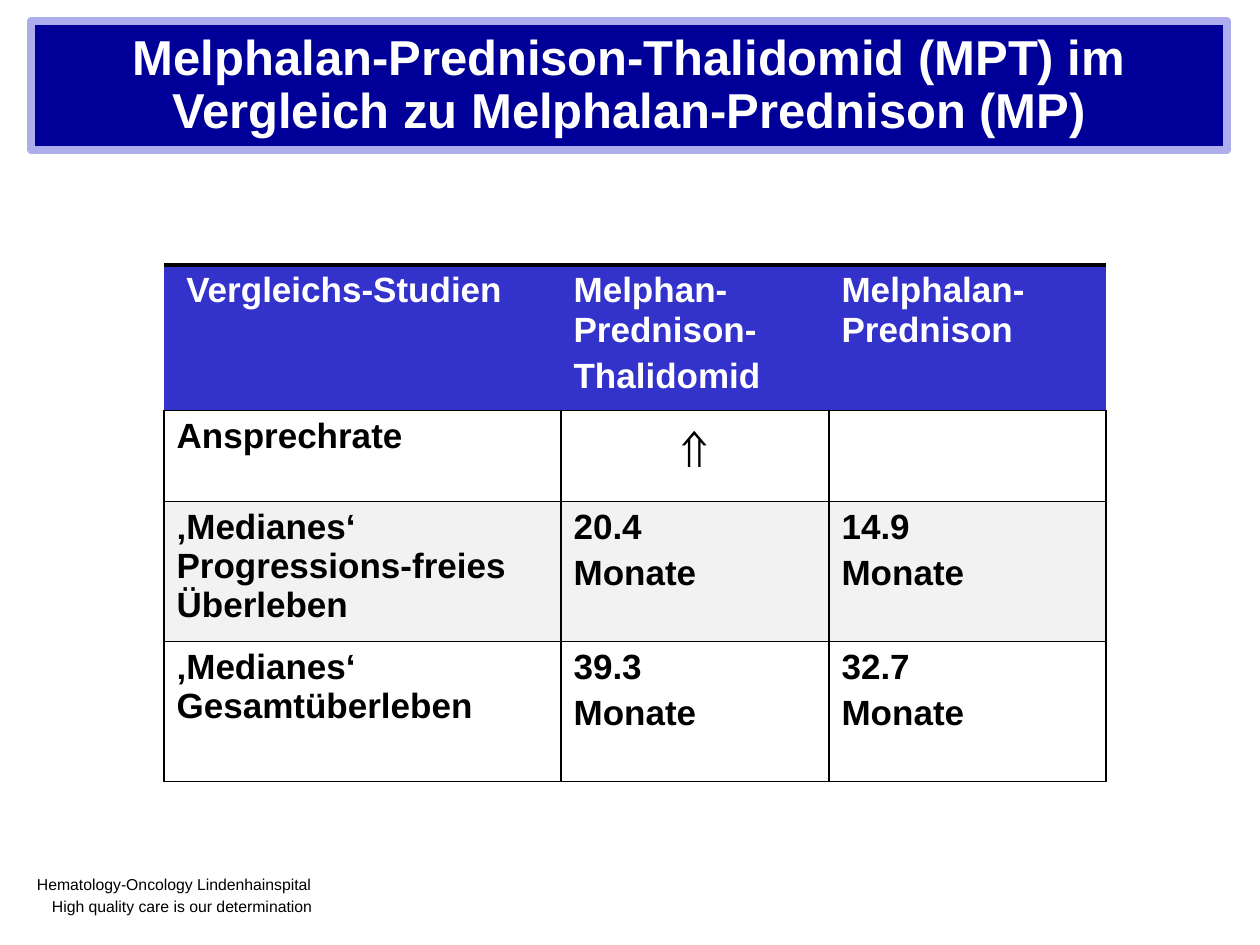
from lxml import etree
from pptx import Presentation
from pptx.dml.color import RGBColor
from pptx.enum.shapes import MSO_SHAPE
from pptx.enum.text import MSO_ANCHOR, MSO_AUTO_SIZE, PP_ALIGN
from pptx.oxml.ns import qn
from pptx.util import Pt

RECTANGLE = MSO_SHAPE.RECTANGLE
MIDDLE = MSO_ANCHOR.MIDDLE
NO_AUTOFIT = MSO_AUTO_SIZE.NONE
LEFT, CENTER = PP_ALIGN.LEFT, PP_ALIGN.CENTER

WHITE = RGBColor(0xFF, 0xFF, 0xFF)
BLACK = RGBColor(0, 0, 0)
NAVY = RGBColor(0, 0, 0x99)
LAVENDER = RGBColor(0xAD, 0xAD, 0xEB)
HEADER_BLUE = RGBColor(0x33, 0x33, 0xCC)
PALE_GRAY = RGBColor(0xF2, 0xF2, 0xF2)

FONT = "Arial"
EMU_PER_INCH = 914400
PX_PER_INCH = 126

TITLE = "Melphalan-Prednison-Thalidomid (MPT) im Vergleich zu Melphalan-Prednison (MP)"
ARROW = "⇑"
TABLE_ROWS = [
    [" Vergleichs-Studien", "Melphan-Prednison-\nThalidomid", "Melphalan-Prednison"],
    ["Ansprechrate", ARROW, ""],
    ["‚Medianes‘ Progressions-freies Überleben", "20.4\nMonate", "14.9\nMonate"],
    ["‚Medianes‘ Gesamtüberleben", "39.3\nMonate", "32.7\nMonate"],
]
ROW_FILLS = [HEADER_BLUE, WHITE, PALE_GRAY, WHITE]
COLUMN_WIDTHS = [397, 268, 277]
ROW_HEIGHTS = [136, 91, 140, 140]
FOOTER_LINES = [
    ("Hematology-Oncology Lindenhainspital", 0),
    ("High quality care is our determination", 15),
]


def px(length):
    return round(length * EMU_PER_INCH / PX_PER_INCH)


def format_font(paragraph, size, color, bold=False):
    font = paragraph.font
    font.name = FONT
    font.size = Pt(size)
    font.bold = bold
    font.color.rgb = color


def add_title(slide, left, top, width, height):
    title = slide.shapes.title
    title.left, title.top = px(left + 4), px(top + 4)
    title.width, title.height = px(width - 8), px(height - 8)
    title.fill.solid()
    title.fill.fore_color.rgb = NAVY
    frame = title.text_frame
    frame.text = TITLE
    frame.auto_size = NO_AUTOFIT
    frame.word_wrap = True
    frame.vertical_anchor = MIDDLE
    paragraph = frame.paragraphs[0]
    paragraph.alignment = CENTER
    paragraph.line_spacing = Pt(30)
    format_font(paragraph, 28, WHITE, True)

    border = slide.shapes.add_shape(RECTANGLE, px(left), px(top), px(width), px(height))
    border.shadow.inherit = False
    border.fill.background()
    border.line.color.rgb = LAVENDER
    border.line.width = Pt(4.25)
    etree.SubElement(border.line._get_or_add_ln(), qn("a:round"))


def set_borders(cell, widths):
    properties = cell._tc.get_or_add_tcPr()
    for side, width in zip("LRTB", widths):
        line = etree.SubElement(properties, qn(f"a:ln{side}"), w=str(Pt(width)))
        if width:
            fill = etree.SubElement(line, qn("a:solidFill"))
            etree.SubElement(fill, qn("a:srgbClr"), val=str(BLACK))
        else:
            etree.SubElement(line, qn("a:noFill"))


def fill_cell(cell, text, fill, is_header):
    set_borders(cell, (0, 0, 2, 1) if is_header else (1, 1, 1, 1))
    cell.fill.solid()
    cell.fill.fore_color.rgb = fill
    cell.text = text
    is_arrow = text == ARROW
    for paragraph in cell.text_frame.paragraphs:
        paragraph.alignment = CENTER if is_arrow else LEFT
        paragraph.space_before = Pt(4)
        format_font(paragraph, 32 if is_arrow else 20, WHITE if is_header else BLACK, True)


def add_study_table(slide, left, top):
    table = slide.shapes.add_table(
        len(ROW_HEIGHTS), len(COLUMN_WIDTHS), px(left), px(top),
        px(sum(COLUMN_WIDTHS)), px(sum(ROW_HEIGHTS)),
    ).table
    table.first_row = False
    table.horz_banding = False
    for column, width in zip(table.columns, COLUMN_WIDTHS):
        column.width = px(width)
    for row_index, (row, height) in enumerate(zip(table.rows, ROW_HEIGHTS)):
        row.height = px(height)
        for cell, text in zip(row.cells, TABLE_ROWS[row_index]):
            fill_cell(cell, text, ROW_FILLS[row_index], row_index == 0)


def add_footer(slide, left, top, width, height):
    frame = slide.shapes.add_textbox(px(left), px(top), px(width), px(height)).text_frame
    frame.word_wrap = True
    frame.margin_left = frame.margin_right = frame.margin_top = frame.margin_bottom = 0
    frame.text = "\n".join(text for text, _ in FOOTER_LINES)
    for paragraph, (_, indent) in zip(frame.paragraphs, FOOTER_LINES):
        paragraph._p.get_or_add_pPr().set("marL", str(px(indent)))
        paragraph.space_before = Pt(1.4)
        format_font(paragraph, 9, BLACK)


def main():
    presentation = Presentation()
    presentation.slide_width = px(1260)
    presentation.slide_height = px(945)
    slide = presentation.slides.add_slide(presentation.slide_layouts[5])
    add_footer(slide, 37, 875, 340, 48)
    add_title(slide, 31, 21, 1196, 129)
    add_study_table(slide, 164, 265)
    presentation.save("out.pptx")


if __name__ == "__main__":
    main()
